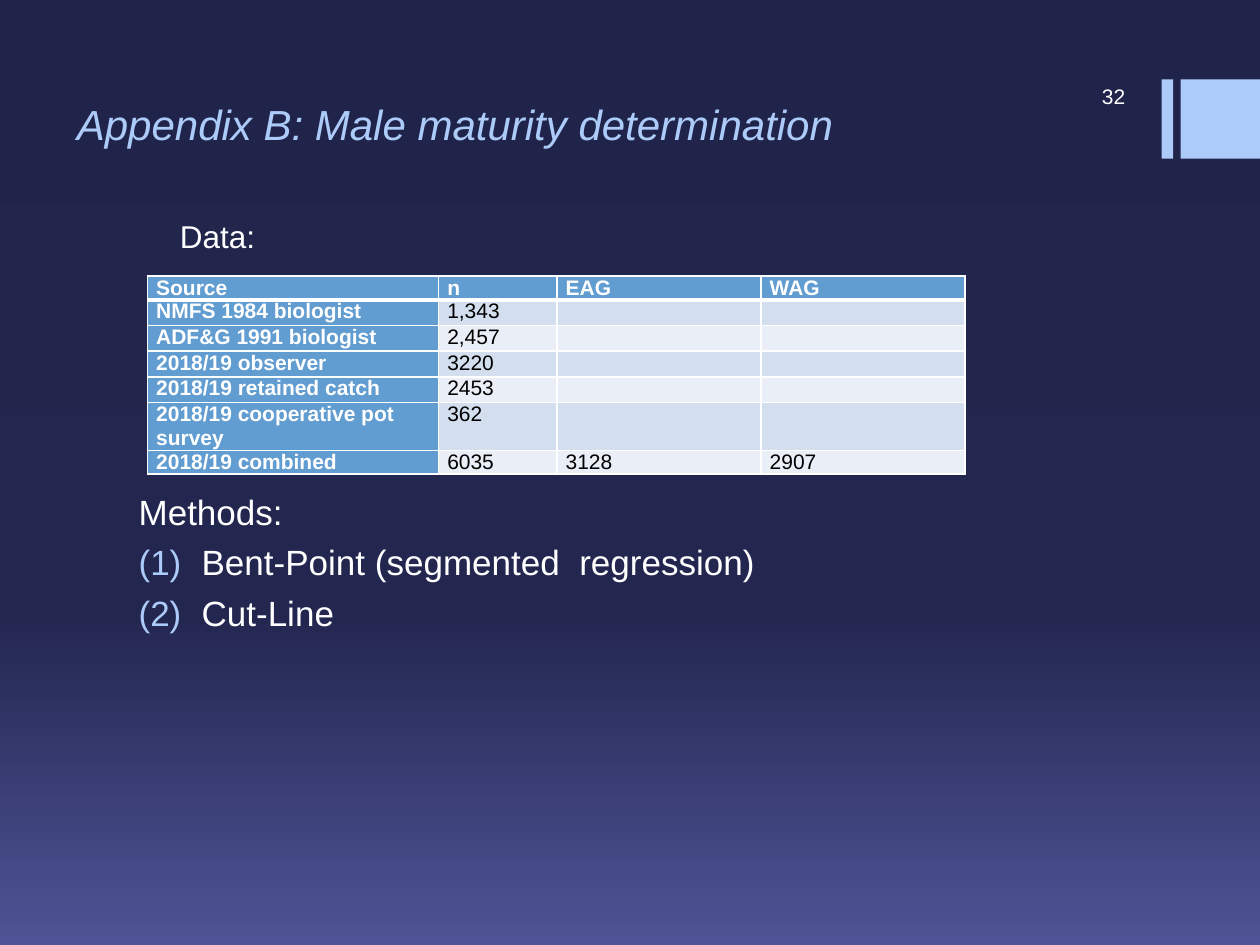
from dataclasses import dataclass
from typing import Any

from lxml.etree import SubElement as Sub
from pptx import Presentation as Deck
from pptx.dml.color import RGBColor as Rgb
from pptx.enum.shapes import MSO_SHAPE as Kind
from pptx.enum.text import MSO_ANCHOR as Anchor, MSO_AUTO_SIZE as Fit, PP_ALIGN as Align
from pptx.oxml.ns import qn
from pptx.util import Inches, Pt

HUES = {
    "top": "21244A", "mid": "232750", "low": "4F5395",
    "pale": "ACCBF9", "white": "FFFFFF", "black": "000000",
    "head": "629DD1", "odd": "D3DFEE", "even": "EAEFF7",
}
STOPS = {"top": 0, "mid": 65, "low": 100}
FRAME = {"word_wrap": True, "auto_size": Fit.NONE}
CELL = {
    "margin_left": Inches(0.07), "margin_right": Inches(0.07),
    "margin_top": 0, "margin_bottom": 0, "vertical_anchor": Anchor.TOP,
}
COLS = [2.31, 0.94, 1.62, 1.62]
LINE = 0.19
ROWS = [
    ("Source", "n", "EAG", "WAG"),
    ("NMFS 1984 biologist", "1,343", "", ""),
    ("ADF&G 1991 biologist", "2,457", "", ""),
    ("2018/19 observer", "3220", "", ""),
    ("2018/19 retained catch", "2453", "", ""),
    ("2018/19 cooperative pot survey", "362", "", ""),
    ("2018/19 combined", "6035", "3128", "2907"),
]
TALL = 5


@dataclass
class Box:
    left: float
    top: float
    width: float
    height: float

    def lens(self) -> list[int]:
        return [Inches(n) for n in (self.left, self.top, self.width, self.height)]


@dataclass
class Note:
    text: str
    box: Box
    size: int
    align: Align
    anchor: Anchor


BARS = [Box(9.22, 0.63, 0.09, 0.63), Box(9.37, 0.63, 0.63, 0.63)]
NOTES = [
    Note("32", Box(8, 0.6, 1.03, 0.33), 12, Align.RIGHT, Anchor.MIDDLE),
    Note("Data:", Box(1.33, 1.67, 0.92, 0.4), 18, Align.LEFT, Anchor.TOP),
]


def apply(item: Any, form: dict[str, Any]) -> None:
    for name, value in form.items():
        setattr(item, name, value)


def place(shape: Any, box: Box) -> None:
    apply(shape, dict(zip(("left", "top", "width", "height"), box.lens())))


def style(part: Any, size: int, hue: str, bold: bool = False, slant: bool = False) -> None:
    apply(part.font, {"name": "Arial", "size": Pt(size), "bold": bold, "italic": slant})
    part.font.color.rgb = Rgb.from_string(HUES[hue])


def tint(parent: Any, hue: str) -> None:
    Sub(parent, qn("a:srgbClr"), val=HUES[hue])


def paint(slide: Any) -> None:
    fill = slide.background.fill
    fill.gradient()
    fill.gradient_angle = 270
    stops = next(slide.element.iter(qn("a:gsLst")))
    for stop in list(stops):
        stops.remove(stop)
    for hue, spot in STOPS.items():
        tint(Sub(stops, qn("a:gs"), pos=str(spot * 1000)), hue)


def bar(slide: Any, box: Box) -> None:
    shape = slide.shapes.add_shape(Kind.RECTANGLE, *box.lens())
    shape.shadow.inherit = False
    shape.fill.solid()
    shape.fill.fore_color.rgb = Rgb.from_string(HUES["pale"])
    shape.line.fill.background()


def label(slide: Any, note: Note) -> None:
    frame = slide.shapes.add_textbox(*note.box.lens()).text_frame
    apply(frame, FRAME | {"vertical_anchor": note.anchor})
    para = frame.paragraphs[0]
    para.alignment = note.align
    run = para.add_run()
    run.text = note.text
    style(run, note.size, "white")


def title(slide: Any) -> None:
    shape = slide.shapes.title
    place(shape, Box(0.51, 0.71, 8, 0.42))
    frame = shape.text_frame
    apply(frame, FRAME | {"vertical_anchor": Anchor.TOP, "margin_top": Inches(0.07)})
    frame.text = "Appendix B: Male maturity determination"
    para = frame.paragraphs[0]
    para.alignment = Align.LEFT
    style(para.runs[0], 24, "pale", slant=True)


def body(slide: Any) -> None:
    shape = slide.placeholders[1]
    place(shape, Box(1, 4.23, 8, 1.2))
    frame = shape.text_frame
    apply(frame, FRAME | {"vertical_anchor": Anchor.BOTTOM, "margin_bottom": Inches(0.4)})
    frame.text = "Methods:\nBent-Point (segmented  regression)\nCut-Line"
    for at, para in enumerate(frame.paragraphs):
        apply(para, {"alignment": Align.LEFT, "space_before": Pt(5)})
        style(para.runs[0], 20, "white")
        props = para._p.get_or_add_pPr()
        dent = Inches(0.5) if at else 0
        props.set("marL", str(dent))
        props.set("indent", str(-dent))
        if at:
            tint(Sub(props, qn("a:buClr")), "pale")
            Sub(props, qn("a:buAutoNum"), type="arabicParenBoth")
        else:
            Sub(props, qn("a:buNone"))


def edge(cell: Any, row: int) -> None:
    props = cell._tc.get_or_add_tcPr()
    wide = {"L": 1, "R": 1, "T": 3 if row == 1 else 1, "B": 1 if row else 3}
    for at, (side, width) in enumerate(wide.items()):
        line = Sub(props, qn(f"a:ln{side}"), w=str(Pt(width)))
        tint(Sub(line, qn("a:solidFill")), "white")
        props.insert(at, line)


def fill(cell: Any, text: str, row: int, col: int) -> None:
    lead = row == 0 or col == 0
    apply(cell, CELL)
    cell.fill.solid()
    hue = "head" if lead else "odd" if row % 2 else "even"
    cell.fill.fore_color.rgb = Rgb.from_string(HUES[hue])
    edge(cell, row)
    para = cell.text_frame.paragraphs[0]
    if text:
        run = para.add_run()
        run.text = text
        style(run, 12, "white" if lead else "black", bold=lead)
    else:
        Sub(para._p, qn("a:endParaRPr"), sz="1200")


def grid(slide: Any) -> None:
    box = Box(1.17, 2.19, sum(COLS), LINE * (len(ROWS) + 1))
    table = slide.shapes.add_table(len(ROWS), len(COLS), *box.lens()).table
    table.horz_banding = False
    for col, width in zip(table.columns, COLS):
        col.width = Inches(width)
    for row, texts in enumerate(ROWS):
        table.rows[row].height = Inches(LINE * (2 if row == TALL else 1))
        for col, text in enumerate(texts):
            fill(table.cell(row, col), text, row, col)


def main() -> None:
    deck = Deck()
    apply(deck, {"slide_width": Inches(10), "slide_height": Inches(7.5)})
    slide = deck.slides.add_slide(deck.slide_layouts[1])
    paint(slide)
    for box in BARS:
        bar(slide, box)
    title(slide)
    grid(slide)
    body(slide)
    for note in NOTES:
        label(slide, note)
    deck.save("out.pptx")


if __name__ == "__main__":
    main()
